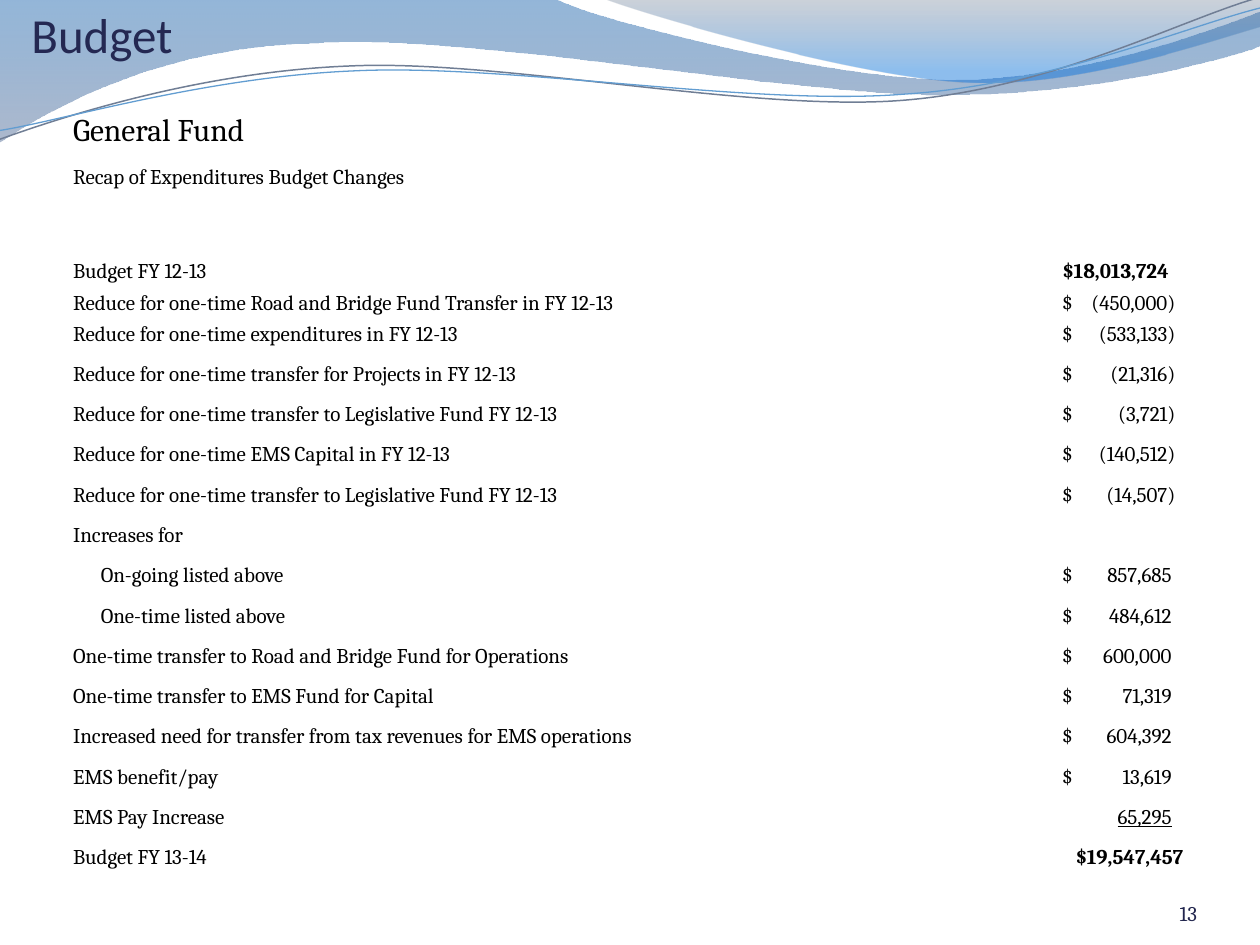
from lxml.etree import SubElement
from pptx import Presentation
from pptx.dml.color import RGBColor
from pptx.enum.text import MSO_ANCHOR, PP_ALIGN
from pptx.oxml.ns import qn
from pptx.util import Inches, Pt

NAVY = RGBColor(0x24, 0x28, 0x52)
NUMBER_NAVY = RGBColor(0x22, 0x26, 0x4E)
BLACK = RGBColor(0, 0, 0)
STEEL = RGBColor(0x12, 0x5E, 0xAA)
SLATE = RGBColor(0x69, 0x7F, 0xA4)
GRAPHITE = RGBColor(0x59, 0x69, 0x82)
AZURE = RGBColor(0x06, 0x70, 0xDA)
GREY_LINE = RGBColor(0x70, 0x7E, 0x95)
BLUE_LINE = RGBColor(0x62, 0x9D, 0xD1)

NO_STYLE = "{2D5ABB26-0587-4C30-8999-92F81FD0307C}"
CURVE_TILT = 357.3
COLUMN_WIDTHS = (4.29, 1.07, 1.37, 0.91, 1.27)
ROW_HEIGHTS = (0.36, 0.32, 0.22, 0.2, 0.32, 0.26, 0.24) + (0.32,) * 13
HEADINGS = (("General Fund", 18), ("Recap of Expenditures Budget Changes", 12))
FIRST_BUDGET_ROW = 4
LABEL_INDENT = 0.22
AMOUNT_INDENT = 0.21
REDUCTION_TAB = 0.9
INCREASE_TAB = 0.87

BUDGET_LINES = (
    ("Budget FY 12-13", "$18,013,724", 1),
    ("Reduce for one-time Road and Bridge Fund Transfer in FY 12-13", "$\t(450,000)", 2),
    ("Reduce for one-time expenditures in FY 12-13", "$\t(533,133)", 1),
    ("Reduce for one-time transfer for Projects in FY 12-13", "$\t(21,316)", 2),
    ("Reduce for one-time transfer to Legislative Fund FY 12-13", "$\t(3,721)", 2),
    ("Reduce for one-time EMS Capital in FY 12-13", "$\t(140,512)", 1),
    ("Reduce for one-time transfer to Legislative Fund FY 12-13", "$\t(14,507)", 2),
    ("Increases for", "", 1),
    ("On-going listed above", "$\t857,685", 1),
    ("One-time listed above", "$\t484,612", 1),
    ("One-time transfer to Road and Bridge Fund for Operations", "$\t600,000", 2),
    ("One-time transfer to EMS Fund for Capital", "$\t71,319", 1),
    ("Increased need for transfer from tax revenues for EMS operations", "$\t604,392", 3),
    ("EMS benefit/pay", "$\t13,619", 1),
    ("EMS Pay Increase", "\t65,295", 1),
    ("Budget FY 13-14", "$19,547,457", 1),
)

UPPER_WAVE = (
    (0, 0), (4.4, -0.01),
    (4.76, 0.17, 6.64, 0.63, 7.58, 0.63), (8.53, 0.63, 9.58, 0.26, 10, 0.09),
    (10.01, 0.36),
    (9.83, 0.44, 8.7, 0.76, 7.46, 0.75), (6.22, 0.75, 3.82, 0.28, 2.57, 0.34),
    (1.29, 0.36, 0.46, 0.83, -0.01, 1.13),
)
RIGHT_WAVE = (
    (4.79, -0.01),
    (5.09, 0.11, 6.82, 0.62, 7.69, 0.65), (8.56, 0.69, 9.61, 0.32, 10, 0.21),
    (10, 0),
)
GREY_CURVE = (
    (-0.02, 0.87), (0.47, 0.72, 1.58, 0.41, 2.78, 0.42),
    (3.96, 0.42, 5.91, 0.93, 7.12, 0.9), (8.32, 0.87, 9.4, 0.36, 10, 0.22),
)
BLUE_CURVE = (
    (-0.02, 0.8), (0.46, 0.75, 1.64, 0.45, 2.83, 0.46),
    (4.03, 0.46, 5.96, 0.89, 7.16, 0.85), (8.35, 0.83, 9.42, 0.42, 10.02, 0.3),
)


def add_outline(slide, left, top, outline, close):
    """Draw straight and cubic segments relative to a corner."""
    points = [(left + Inches(x), top + Inches(y))
              for segment in outline for x, y in zip(segment[::2], segment[1::2])]
    builder = slide.shapes.build_freeform(*points[0])
    builder.add_line_segments(points[1:], close=close)
    shape = builder.convert_to_shape()
    shape.shadow.inherit = False
    steps = iter(list(shape.element.iter(qn("a:lnTo"))))
    for segment in outline[1:]:
        step = next(steps)
        if len(segment) == 6:
            step.tag = qn("a:cubicBezTo")
            for follower in (next(steps), next(steps)):
                step.append(follower[0])
                follower.getparent().remove(follower)
    return shape


def add_wave(slide, left, top, outline, stops):
    """Draw a wave filled with a translucent vertical gradient."""
    wave = add_outline(slide, left, top, outline, True)
    wave.line.fill.background()
    wave.fill.gradient()
    wave.fill.gradient_angle = 270
    for stop, (position, color, _) in zip(wave.fill.gradient_stops, stops):
        stop.position = position
        stop.color.rgb = color
    for element, (_, _, opacity) in zip(wave.element.iter(qn("a:gs")), stops):
        SubElement(element[0], qn("a:alpha"), val=str(opacity * 1000))


def add_banner(slide, left, top):
    """Draw the waves and thin curves across the top."""
    add_wave(slide, left, top, UPPER_WAVE, ((0, STEEL, 45), (1, SLATE, 55)))
    add_wave(slide, left, top, RIGHT_WAVE, ((0, GRAPHITE, 30), (0.8, AZURE, 45)))
    for outline, color, width in ((GREY_CURVE, GREY_LINE, 0.85), (BLUE_CURVE, BLUE_LINE, 0.75)):
        curve = add_outline(slide, left, top, outline, False)
        curve.rotation = CURVE_TILT
        curve.fill.background()
        curve.line.color.rgb = color
        curve.line.width = Pt(width)


def style_font(font, name, size, color):
    """Set the typeface, size and colour of a font."""
    font.name, font.size = name, Pt(size)
    font.color.rgb = color


def add_label(slide, left, top, width, height, text, name, size, color, align, inset=0):
    """Place one bottom-anchored line of text."""
    frame = slide.shapes.add_textbox(left, top, width, height).text_frame
    frame.word_wrap = True
    frame.vertical_anchor = MSO_ANCHOR.BOTTOM
    frame.margin_left = frame.margin_right = frame.margin_bottom = 0
    frame.margin_top = inset
    frame.text = text
    frame.paragraphs[0].alignment = align
    style_font(frame.paragraphs[0].runs[0].font, name, size, color)


def clear_cell(cell):
    """Give a cell no fill, no margins and a small empty line."""
    cell.fill.background()
    cell.margin_left = cell.margin_right = cell.margin_top = cell.margin_bottom = 0
    cell.vertical_anchor = MSO_ANCHOR.BOTTOM
    SubElement(cell.text_frame.paragraphs[0]._p, qn("a:endParaRPr"), sz="800")


def write_cell(cell, text, size=12):
    """Write text in a cell and return its paragraph."""
    paragraph = cell.text_frame.paragraphs[0]
    paragraph.text = text
    style_font(paragraph.runs[0].font, "Cambria", size, BLACK)
    return paragraph


def write_amount(cell, amount):
    """Centre a total, or align an amount on a right tab."""
    paragraph = write_cell(cell, amount)
    if "\t" not in amount:
        paragraph.alignment = PP_ALIGN.CENTER
        paragraph.runs[0].font.bold = True
        return
    cell.margin_left = Inches(AMOUNT_INDENT)
    paragraph.runs[0].font.underline = amount.startswith("\t")
    tab = REDUCTION_TAB if amount.endswith(")") else INCREASE_TAB
    tabs = SubElement(paragraph._p.get_or_add_pPr(), qn("a:tabLst"))
    SubElement(tabs, qn("a:tab"), pos=str(Inches(tab)), algn="r")


def add_budget_table(slide, left, top, width, height):
    """Build the table of expenditure changes."""
    frame = slide.shapes.add_table(len(ROW_HEIGHTS), len(COLUMN_WIDTHS), left, top, width, height)
    table = frame.table
    table.first_row = table.horz_banding = False
    next(frame.element.iter(qn("a:tableStyleId"))).text = NO_STYLE
    for column, column_width in zip(table.columns, COLUMN_WIDTHS):
        column.width = Inches(column_width)
    for row, row_height in zip(table.rows, ROW_HEIGHTS):
        row.height = Inches(row_height)
    for cell in table.iter_cells():
        clear_cell(cell)
    for index, (heading, size) in enumerate(HEADINGS):
        write_cell(table.cell(index, 0), heading, size)
    last_column = len(COLUMN_WIDTHS) - 1
    for index, (label, amount, span) in enumerate(BUDGET_LINES, FIRST_BUDGET_ROW):
        label_cell = table.cell(index, 0)
        if span > 1:
            label_cell.merge(table.cell(index, span - 1))
        write_cell(label_cell, label)
        if label.endswith("listed above"):
            label_cell.margin_left = Inches(LABEL_INDENT)
        if amount:
            write_amount(table.cell(index, last_column), amount)
    table.cell(len(ROW_HEIGHTS) - 1, last_column).margin_left = Inches(LABEL_INDENT)


def main():
    """Build and save the budget slide."""
    deck = Presentation()
    deck.slide_width, deck.slide_height = Inches(10), Inches(7.5)
    slide = deck.slides.add_slide(deck.slide_layouts[6])
    add_banner(slide, Inches(0), Inches(0))
    add_label(slide, Inches(0.25), Inches(0.01), Inches(9), Inches(0.49),
              "Budget", "Calibri", 28, NAVY, PP_ALIGN.LEFT, Inches(0.05))
    add_budget_table(slide, Inches(0.58), Inches(0.83), Inches(8.92), Inches(6.08))
    add_label(slide, Inches(8.67), Inches(6.95), Inches(0.83), Inches(0.4),
              "13", "Cambria", 12, NUMBER_NAVY, PP_ALIGN.RIGHT)
    deck.save("out.pptx")


if __name__ == "__main__":
    main()
